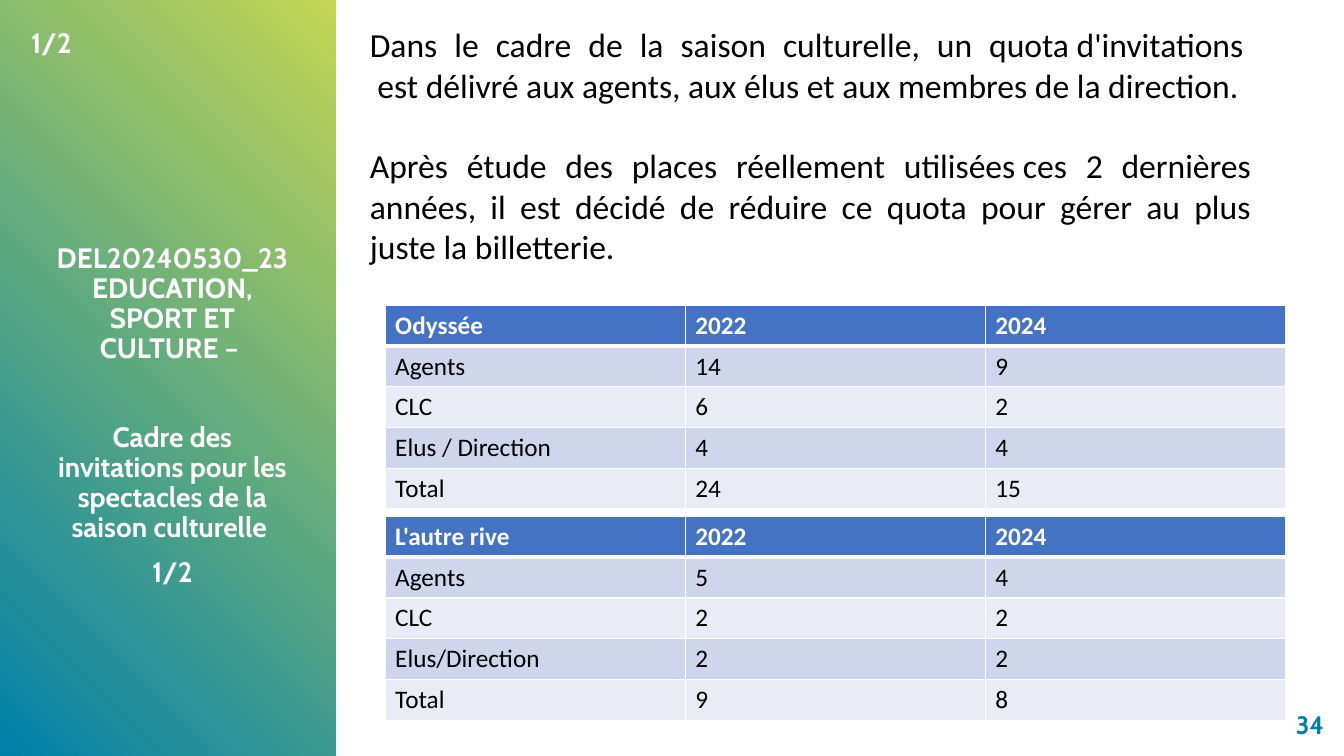
from dataclasses import dataclass

from lxml.etree import SubElement
from pptx import Presentation
from pptx.dml.color import RGBColor as Rgb
from pptx.enum.shapes import MSO_SHAPE as Preset
from pptx.enum.text import MSO_ANCHOR as Anchor, PP_ALIGN as Align
from pptx.oxml.ns import qn
from pptx.util import Inches, Pt

HARD_SPACE = chr(160)


@dataclass(frozen=True)
class Theme:
    blue: str = "0080AA"
    lime: str = "C3D652"
    white: str = "FFFFFF"
    black: str = "000000"
    header: str = "4472C4"
    bands: tuple = ("CFD5EA", "E9EBF5")
    title_font: str = "Cabin"
    body_font: str = "Calibri"
    title_size: int = 20
    body_size: int = 24
    small_size: int = 18
    thin: int = 1
    thick: int = 3


def write(paragraph, text, *, font, size, color, bold=False,
          align=Align.LEFT, line=None, before=None):
    paragraph.alignment = align
    if line:
        paragraph.line_spacing = line
    if before:
        paragraph.space_before = Pt(before)
    run = paragraph.add_run()
    run.text = text.replace("~", HARD_SPACE)
    run.font.name = font
    run.font.size = Pt(size)
    run.font.bold = bold
    run.font.color.rgb = Rgb.from_string(color)


class Deck:
    """Draws styled elements on the current slide; a tilde in text is a hard space."""

    def __init__(self, theme):
        self.theme = theme
        self.show = Presentation()
        self.show.slide_width, self.show.slide_height = Inches(13.33), Inches(7.5)
        self.slide = self.show.slides.add_slide(self.show.slide_layouts[6])

    def gradient_panel(self, *box):
        panel = self.slide.shapes.add_shape(Preset.RECTANGLE, *map(Inches, box))
        panel.shadow.inherit = False
        panel.line.fill.background()
        panel.fill.gradient()
        panel.fill.gradient_angle = 45
        for stop, color in zip(panel.fill.gradient_stops, (self.theme.blue, self.theme.lime)):
            stop.color.rgb = Rgb.from_string(color)

    def text(self, box, paragraphs, anchor=Anchor.TOP, **style):
        frame = self.slide.shapes.add_textbox(*map(Inches, box)).text_frame
        frame.word_wrap = True
        frame.vertical_anchor = anchor
        for index, (content, before) in enumerate(paragraphs):
            paragraph = frame.add_paragraph() if index else frame.paragraphs[0]
            write(paragraph, content, before=before, **style)

    def borders(self, cell, bottom):
        properties = cell._tc.get_or_add_tcPr()
        thin = self.theme.thin
        widths = {"L": thin, "R": thin, "T": thin, "B": bottom}
        for position, (side, width) in enumerate(widths.items()):
            edge = properties.makeelement(qn(f"a:ln{side}"), {"w": str(Pt(width))})
            fill = SubElement(edge, qn("a:solidFill"))
            SubElement(fill, qn("a:srgbClr"), val=self.theme.white)
            properties.insert(position, edge)

    def quota_table(self, box, rows):
        theme = self.theme
        table = self.slide.shapes.add_table(len(rows), len(rows[0]), *map(Inches, box)).table
        for row in table.rows:
            row.height = Inches(box[3] / len(rows))
        for r, values in enumerate(rows):
            heading = r == 0
            background = theme.header if heading else theme.bands[(r - 1) % 2]
            for c, value in enumerate(values):
                cell = table.cell(r, c)
                cell.fill.solid()
                cell.fill.fore_color.rgb = Rgb.from_string(background)
                self.borders(cell, theme.thick if heading else theme.thin)
                write(cell.text_frame.paragraphs[0], value, font=theme.body_font,
                      size=theme.small_size, bold=heading,
                      color=theme.white if heading else theme.black)


def main():
    theme = Theme()
    deck = Deck(theme)
    title = dict(font=theme.title_font, size=theme.title_size, color=theme.white, bold=True)

    deck.gradient_panel(0, 0, 3.33, 7.5)
    deck.text((9.51, 6.98, 3.72, 0.41), [("34", None)], Anchor.MIDDLE, align=Align.RIGHT,
              **{**title, "size": theme.small_size, "color": theme.blue})
    deck.text((0.37, 2.37, 2.68, 4.16), [
        ("DEL20240530_23 EDUCATION, SPORT ET CULTURE~–~", None),
        ("Cadre des invitations pour les spectacles de la saison culturelle~", 41.5),
        ("1/2", 10),
    ], align=Align.CENTER, line=0.9, **title)
    deck.text((3.57, 0.19, 8.94, 3.35), [
        ("Dans le cadre de la saison culturelle, un quota~d'invitations~ ~est~délivré "
         "aux agents, aux élus et aux membres de la direction.", None),
        ("Après étude des places réellement utilisées~ces 2 dernières années, il est décidé "
         "de réduire ce quota pour gérer au plus juste~la billetterie.", 29),
    ], align=Align.JUSTIFY, font=theme.body_font, size=theme.body_size, color=theme.black)
    deck.quota_table((3.82, 3.03, 8.93, 2.02), [
        ("Odyssée", "2022", "2024"),
        ("Agents", "14", "9"),
        ("CLC", "6", "2"),
        ("Elus / Direction", "4", "4"),
        ("Total", "24", "15"),
    ])
    deck.quota_table((3.82, 5.12, 8.93, 2.03), [
        ("L'autre rive", "2022", "2024"),
        ("Agents", "5", "4"),
        ("CLC", "2", "2"),
        ("Elus/Direction", "2", "2"),
        ("Total", "9", "8"),
    ])
    deck.text((0.21, 0.2, 3, 0.44), [("1/2", None)], **title)
    deck.show.save("out.pptx")


if __name__ == "__main__":
    main()
